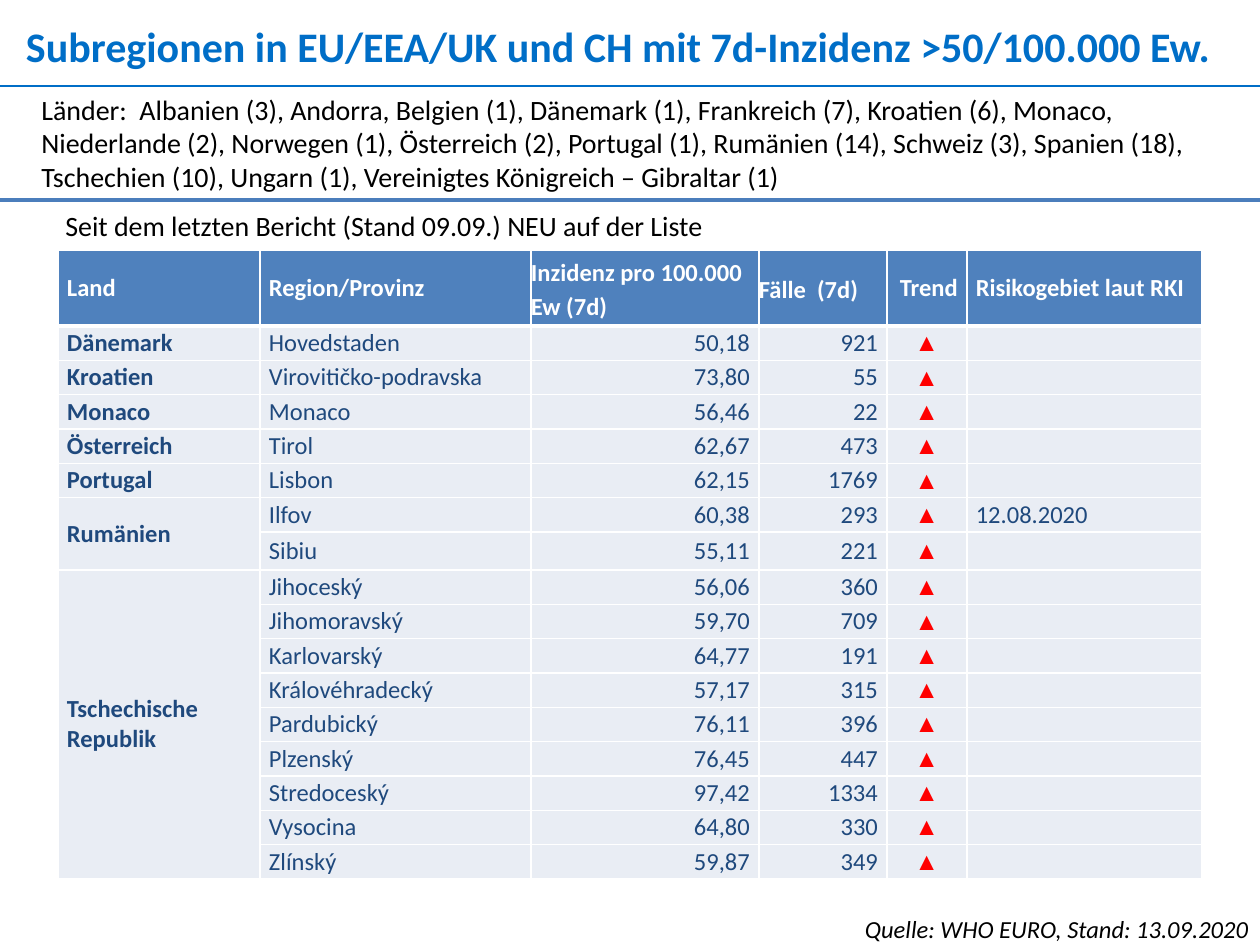
from lxml import etree
from pptx import Presentation
from pptx.dml.color import RGBColor
from pptx.enum.shapes import MSO_CONNECTOR
from pptx.enum.text import MSO_ANCHOR, MSO_AUTO_SIZE, PP_ALIGN
from pptx.oxml.ns import qn
from pptx.util import Pt

PX = 914400 // 126
LEFT, MID, RIGHT = PP_ALIGN.LEFT, PP_ALIGN.CENTER, PP_ALIGN.RIGHT
TOP, CENTRE = MSO_ANCHOR.TOP, MSO_ANCHOR.MIDDLE
FIXED = MSO_AUTO_SIZE.NONE
STRAIGHT = MSO_CONNECTOR.STRAIGHT

BLUE = RGBColor(0x00, 0x6E, 0xC7)
STEEL = RGBColor(0x4B, 0x7E, 0xBC)
HEAD = RGBColor(0x4F, 0x81, 0xBD)
PALE = RGBColor(0xE9, 0xED, 0xF4)
NAVY = RGBColor(0x1F, 0x49, 0x7D)
RED = RGBColor(0xFF, 0x00, 0x00)
BLACK = RGBColor(0x00, 0x00, 0x00)
WHITE = RGBColor(0xFF, 0xFF, 0xFF)


def write(frame, text, size=14, color=BLACK, bold=False, italic=False,
          font="Calibri", align=LEFT):
    """Fill the first paragraph of a text frame and return it."""
    para = frame.paragraphs[0]
    para.alignment = align
    if text:
        run = para.add_run()
        run.text = text
        run.font.name, run.font.size = font, Pt(size)
        run.font.bold, run.font.italic = bold, italic
        run.font.color.rgb = color
    else:
        etree.SubElement(para._p, qn("a:endParaRPr"), sz=str(size * 100))
    return para


def edge(cell, side, width):
    """Draw one white border of a table cell."""
    line = etree.SubElement(cell._tc.get_or_add_tcPr(), qn("a:ln" + side),
                            w=str(Pt(width)))
    fill = etree.SubElement(line, qn("a:solidFill"))
    etree.SubElement(fill, qn("a:srgbClr"), val=str(WHITE))


prs = Presentation()
prs.slide_width, prs.slide_height = 1260 * PX, 945 * PX
slide = prs.slides.add_slide(prs.slide_layouts[5])

# Title
title = slide.shapes.title
title.left, title.top, title.width, title.height = (
    26 * PX, 20 * PX, 1213 * PX, 51 * PX)
frame = title.text_frame
frame.margin_left = frame.margin_right = 0
frame.margin_top = frame.margin_bottom = 0
frame.vertical_anchor, frame.auto_size = TOP, FIXED
write(frame, "Subregionen in EU/EEA/UK und CH mit 7d-Inzidenz >50/100.000 Ew.",
      size=24, color=BLUE, bold=True)

# Rules
for start, y, color, width in [(0, 86, BLUE, 1.5), (-2, 200, STEEL, 1.75)]:
    rule = slide.shapes.add_connector(STRAIGHT, start * PX, y * PX,
                                      1260 * PX, y * PX)
    rule.line.color.rgb, rule.line.width = color, Pt(width)
    etree.SubElement(rule._element.spPr, qn("a:effectLst"))

# Texts
lands = ("Länder:  Albanien (3), Andorra, Belgien (1), Dänemark (1), "
         "Frankreich (7), Kroatien (6), Monaco, Niederlande (2), Norwegen (1), "
         "Österreich (2), Portugal (1), Rumänien (14), Schweiz (3), "
         "Spanien (18), Tschechien (10), Ungarn (1), "
         "Vereinigtes Königreich – Gibraltar (1)")
since = "Seit dem letzten Bericht (Stand 09.09.) NEU auf der Liste"
source = "Quelle: WHO EURO, Stand: 13.09.2020"
for x, y, w, h, text, style in [
    (29, 86, 1205, 115, lands, {"size": 16}),
    (53, 202, 1002, 47, since, {"size": 16}),
    (679, 908, 582, 43, source, {"italic": True, "align": RIGHT}),
]:
    box = slide.shapes.add_textbox(x * PX, y * PX, w * PX, h * PX)
    box.text_frame.word_wrap = True
    write(box.text_frame, text, **style)

# Table
heads = ["Land", "Region/Provinz", "Inzidenz pro 100.000 Ew (7d)",
         "Fälle  (7d)", "Trend", "Risikogebiet laut RKI"]
groups = [
    ("Dänemark", [("Hovedstaden", "50,18", "921")]),
    ("Kroatien", [("Virovitičko-podravska", "73,80", "55")]),
    ("Monaco", [("Monaco", "56,46", "22")]),
    ("Österreich", [("Tirol", "62,67", "473")]),
    ("Portugal", [("Lisbon", "62,15", "1769")]),
    ("Rumänien", [("Ilfov", "60,38", "293"), ("Sibiu", "55,11", "221")]),
    ("Tschechische Republik", [
        ("Jihoceský", "56,06", "360"),
        ("Jihomoravský", "59,70", "709"),
        ("Karlovarský", "64,77", "191"),
        ("Královéhradecký", "57,17", "315"),
        ("Pardubický", "76,11", "396"),
        ("Plzenský", "76,45", "447"),
        ("Stredoceský", "97,42", "1334"),
        ("Vysocina", "64,80", "330"),
        ("Zlínský", "59,87", "349"),
    ]),
]
risk = {"Ilfov": "12.08.2020"}

rows, spans = [heads], []
for land, parts in groups:
    spans.append((len(rows), len(parts)))
    for i, (part, rate, cases) in enumerate(parts):
        rows.append([land if i == 0 else "", part, rate, cases, "▲",
                     risk.get(part, "")])

widths = [202, 271, 228, 128, 80, 235]
table = slide.shapes.add_table(len(rows), len(widths), 58 * PX, 250 * PX,
                               sum(widths) * PX, 629 * PX).table
table.horz_banding = False
for col, width in zip(table.columns, widths):
    col.width = width * PX
for row in table.rows:
    row.height = 515 * PX // 15
table.rows[0].height = 76 * PX
table.rows[7].height = 38 * PX

styles = [{"bold": True}, {}, {"align": RIGHT}, {"align": RIGHT},
          {"align": MID, "color": RED, "font": "Arial"}, {}]
for r, row in enumerate(rows):
    for c, text in enumerate(row):
        cell = table.cell(r, c)
        cell.margin_left = cell.margin_right = 0
        cell.margin_top = cell.margin_bottom = 0
        cell.vertical_anchor = CENTRE
        for side in "LRTB":
            thick = (r, side) in [(0, "B"), (1, "T")]
            edge(cell, side, 3 if thick else 1)
        cell.fill.solid()
        cell.fill.fore_color.rgb = PALE if r else HEAD
        style = {"color": NAVY, **styles[c]}
        if r == 0:
            style = {"color": WHITE, "bold": True,
                     "align": RIGHT if c == 4 else LEFT}
        para = write(cell.text_frame, text, **style)
        if r == 0 and c in (2, 3):
            para.line_spacing = 1.15
        else:
            para.space_before = para.space_after = Pt(2)
            props = para._p.get_or_add_pPr()
            props.set("marL", str(9 * PX))
            props.set("marR", str(9 * PX))

for first, count in spans:
    if count > 1:
        table.cell(first, 0).merge(table.cell(first + count - 1, 0))

prs.save("out.pptx")
